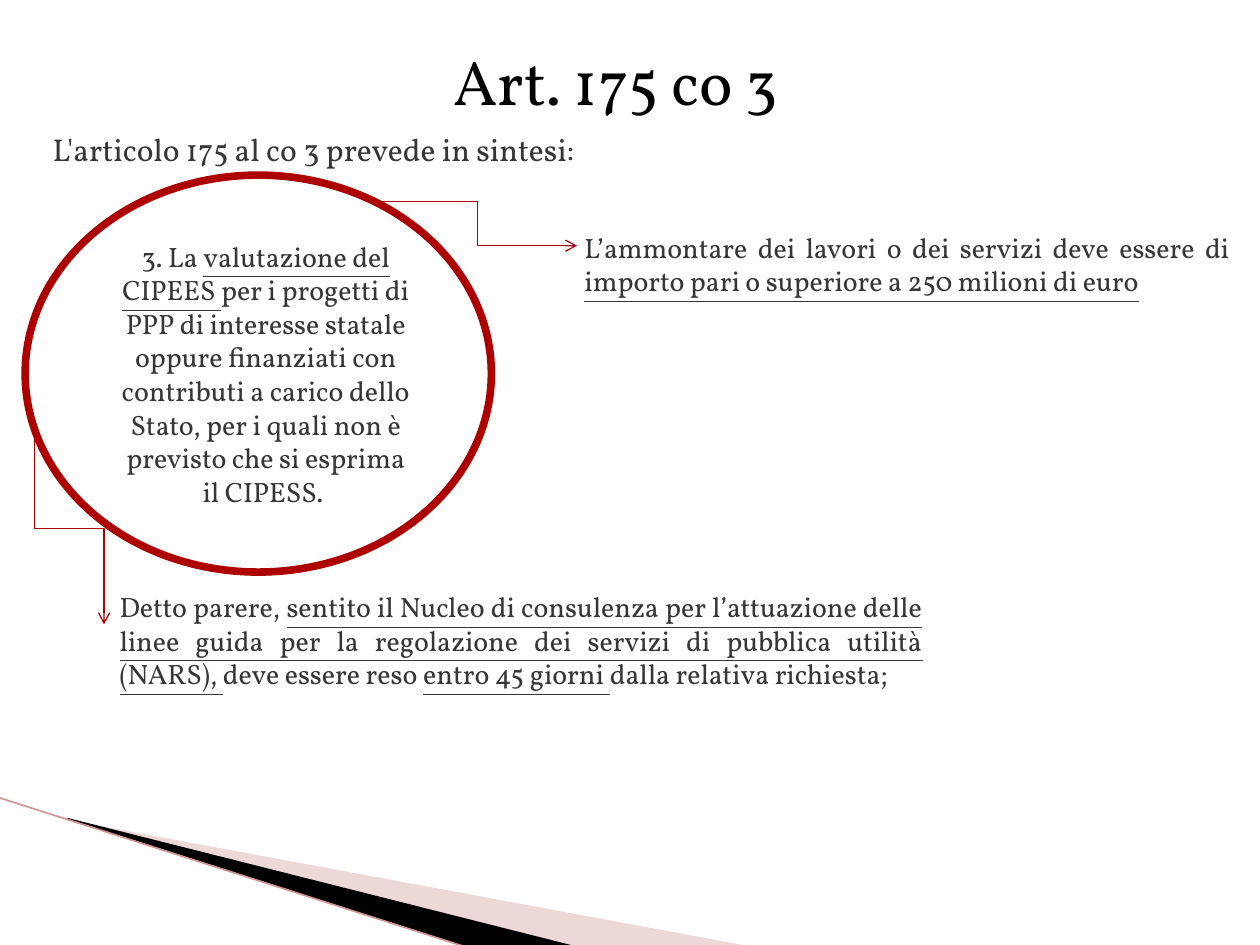
from dataclasses import dataclass

from lxml.etree import SubElement
from pptx import Presentation
from pptx.dml.color import RGBColor
from pptx.enum.shapes import MSO_CONNECTOR, MSO_SHAPE
from pptx.enum.text import MSO_ANCHOR, MSO_AUTO_SIZE, PP_ALIGN
from pptx.oxml.ns import qn
from pptx.shapes.connector import Connector
from pptx.slide import Slide
from pptx.text.text import TextFrame
from pptx.util import Inches, Pt


@dataclass(frozen=True)
class Theme:
    font: str = "Vollkorn"
    ink: str = "363639"
    title_ink: str = "000000"
    paper: str = "FFFFFF"
    accent: str = "AD0101"
    rose: str = "D29E9E"
    edge: str = "CD9595"
    title: int = 36
    lead: int = 18
    body: int = 16


@dataclass(frozen=True)
class Wedge:
    points: tuple[tuple[float, float], ...]
    color: str
    alpha: int = 100


@dataclass(frozen=True)
class Passage:
    box: tuple[float, float, float, float]
    phrases: tuple[str, ...]
    size: int = Theme.body
    color: str = Theme.ink
    align: PP_ALIGN = PP_ALIGN.JUSTIFY
    indent: float = 0.12
    wrap: bool = True


@dataclass(frozen=True)
class Link:
    kind: MSO_CONNECTOR
    start: tuple[float, float]
    end: tuple[float, float]
    color: str = Theme.accent
    width: float = 0.75
    arrow: bool = True
    rotation: int = 0


THEME = Theme()
WEDGES = (
    Wedge(((0.55, 6.51), (5.95, 7.51), (4.56, 7.51), (0.55, 6.5)), THEME.rose, 40),
    Wedge(((0.53, 6.49), (4.57, 7.51), (3.72, 7.52), (0.54, 6.5)), "000000"),
)
WEDGE_EDGE = Link(MSO_CONNECTOR.STRAIGHT, (-0.01, 6.33), (3.71, 7.52), THEME.edge, 0.95, False)
AMOUNT_ARROW = Link(MSO_CONNECTOR.ELBOW, (3, 1.6), (4.58, 1.95))
OPINION_ARROW = Link(MSO_CONNECTOR.ELBOW, (1.31, 3.92), (-0.21, 4.47), rotation=270)
EVALUATION = Passage(
    (0.2, 1.39, 3.7, 3.15),
    (
        "3. La ",
        "valutazione del CIPEES ",
        "per i progetti di PPP di interesse statale oppure finanziati con contributi "
        "a carico dello Stato, per i quali non è previsto che si esprima il CIPESS. ",
    ),
    align=PP_ALIGN.CENTER,
)
PASSAGES = (
    Passage((3.5, 0.29, 3.1, 0.71), ("Art. 175 co 3",), THEME.title, THEME.title_ink,
            PP_ALIGN.LEFT, 0, False),
    Passage((0.2, 0.98, 8.35, 0.4), ("L'articolo 175 al co 3 prevede in sintesi: ",), THEME.lead),
    Passage(
        (0.73, 4.63, 6.69, 0.91),
        (
            "Detto parere, ",
            "sentito il Nucleo di consulenza per l’attuazione delle linee guida "
            "per la regolazione dei servizi di pubblica utilità (NARS), ",
            "deve essere reso ",
            "entro 45 giorni ",
            "dalla relativa richiesta; ",
        ),
    ),
    Passage(
        (4.54, 1.78, 5.32, 0.64),
        (
            "L’ammontare dei lavori o dei servizi deve essere di ",
            "importo pari o superiore a 250 milioni di euro",
        ),
        indent=0,
    ),
)


def write(frame: TextFrame, phrases: tuple[str, ...], *, size: int, color: str,
          align: PP_ALIGN, indent: float, wrap: bool) -> None:
    """Write the phrases as one paragraph, underlining every second one."""
    frame.word_wrap = wrap
    paragraph = frame.paragraphs[0]
    paragraph.alignment = align
    properties = paragraph._p.get_or_add_pPr()
    properties.set("marL", str(Inches(indent)))
    properties.set("indent", "0")
    for index, phrase in enumerate(phrases):
        run = paragraph.add_run()
        run.text = phrase
        run.font.name = THEME.font
        run.font.size = Pt(size)
        run.font.underline = index % 2 == 1
        run.font.color.rgb = RGBColor.from_string(color)


def write_passage(frame: TextFrame, passage: Passage) -> None:
    """Write a passage with its own format."""
    write(frame, passage.phrases, size=passage.size, color=passage.color,
          align=passage.align, indent=passage.indent, wrap=passage.wrap)


def draw_wedge(slide: Slide, wedge: Wedge) -> None:
    """Draw one filled wedge of the corner decoration."""
    first, *rest = [(Inches(x), Inches(y)) for x, y in wedge.points]
    builder = slide.shapes.build_freeform(*first)
    builder.add_line_segments(rest, close=True)
    blade = builder.convert_to_shape()
    blade.shadow.inherit = False
    blade.line.fill.background()
    blade.fill.solid()
    blade.fill.fore_color.rgb = RGBColor.from_string(wedge.color)
    if wedge.alpha < 100:
        tint = blade._element.spPr.find(f"{qn('a:solidFill')}/{qn('a:srgbClr')}")
        SubElement(tint, qn("a:alpha"), val=str(wedge.alpha * 1000))


def draw_link(slide: Slide, link: Link) -> Connector:
    """Draw a straight or elbow connector."""
    ends = [Inches(value) for value in (*link.start, *link.end)]
    connector = slide.shapes.add_connector(link.kind, *ends)
    connector.line.color.rgb = RGBColor.from_string(link.color)
    connector.line.width = Pt(link.width)
    properties = connector._element.spPr
    if link.rotation:
        properties.find(qn("a:xfrm")).set("rot", str(link.rotation * 60000))
    if link.arrow:
        SubElement(properties.find(qn("a:ln")), qn("a:tailEnd"), type="arrow")
    SubElement(properties, qn("a:effectLst"))
    return connector


def draw_evaluation(slide: Slide) -> None:
    """Draw the outlined ellipse with the evaluation rule."""
    ellipse = slide.shapes.add_shape(MSO_SHAPE.OVAL, *map(Inches, EVALUATION.box))
    ellipse.shadow.inherit = False
    ellipse.fill.solid()
    ellipse.fill.fore_color.rgb = RGBColor.from_string(THEME.paper)
    ellipse.line.color.rgb = RGBColor.from_string(THEME.accent)
    ellipse.line.width = Pt(4.33)
    ellipse.text_frame.vertical_anchor = MSO_ANCHOR.MIDDLE
    write_passage(ellipse.text_frame, EVALUATION)


def draw_passage(slide: Slide, passage: Passage) -> None:
    """Draw a passage in its own text box."""
    frame = slide.shapes.add_textbox(*map(Inches, passage.box)).text_frame
    frame.auto_size = MSO_AUTO_SIZE.SHAPE_TO_FIT_TEXT
    write_passage(frame, passage)


def main() -> None:
    """Build and save the slide."""
    deck = Presentation()
    deck.slide_width, deck.slide_height = Inches(10), Inches(7.5)
    slide = deck.slides.add_slide(deck.slide_layouts[6])
    for wedge in WEDGES:
        draw_wedge(slide, wedge)
    draw_link(slide, WEDGE_EDGE)
    draw_evaluation(slide)
    for arrow in (AMOUNT_ARROW, OPINION_ARROW):
        draw_link(slide, arrow)
    for passage in PASSAGES:
        draw_passage(slide, passage)
    deck.save("out.pptx")


if __name__ == "__main__":
    main()
